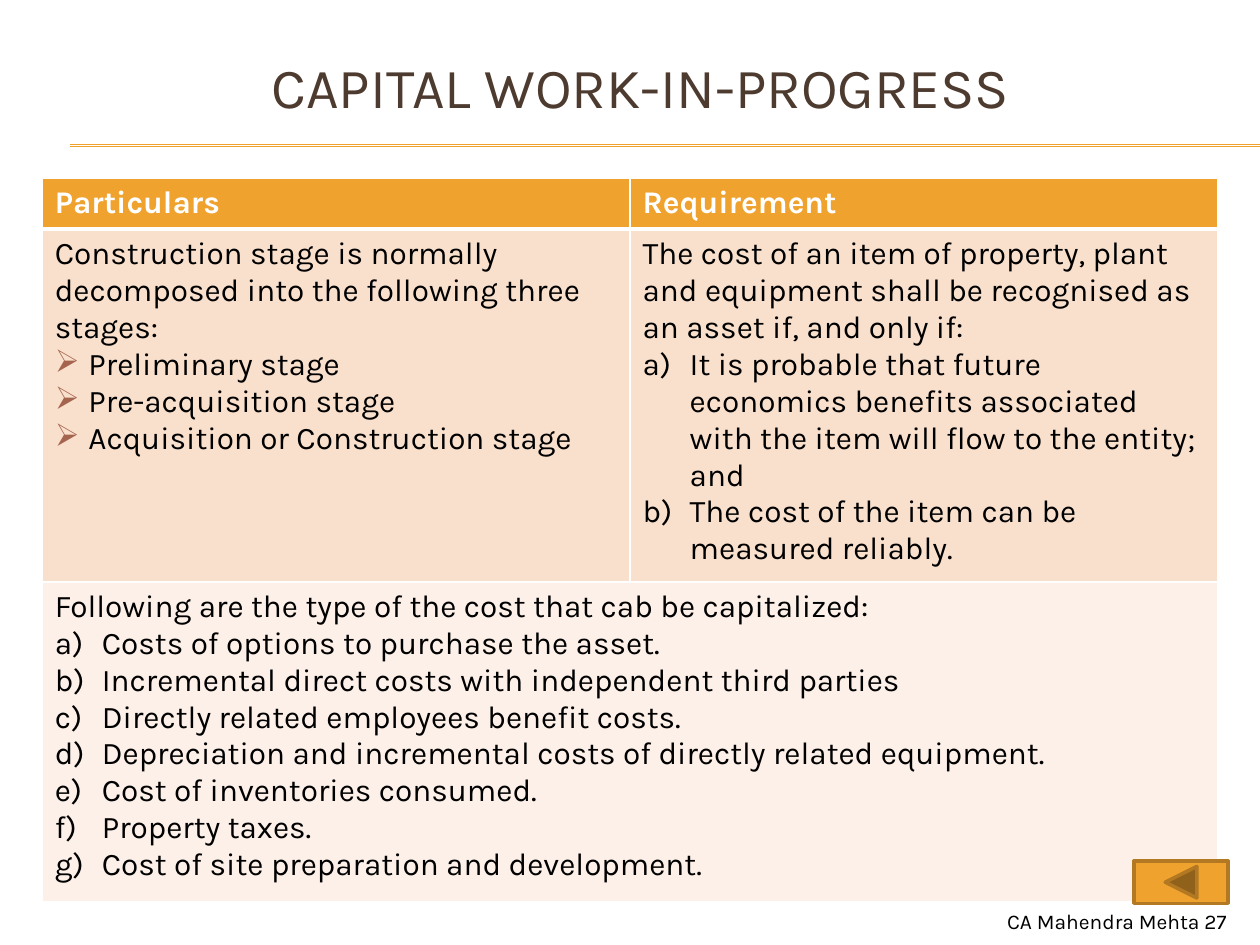
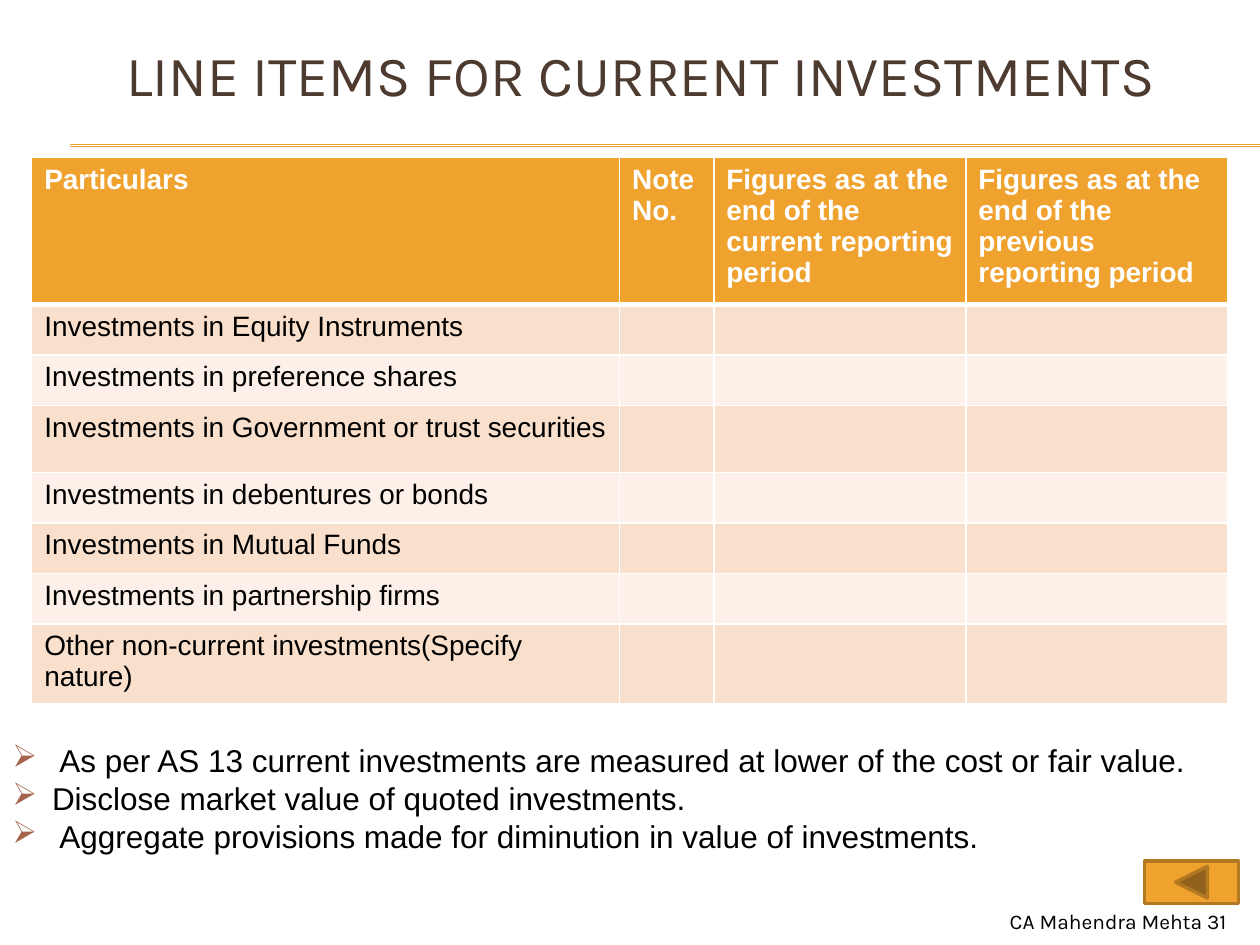
import pptx
import pptx.dml.color
import pptx.enum.shapes
import pptx.enum.text
import pptx.oxml
import pptx.oxml.ns
import pptx.util
from dataclasses import dataclass
from typing import NamedTuple

Cm = pptx.util.Cm
Pt = pptx.util.Pt
Align = pptx.enum.text.PP_ALIGN
Anchor = pptx.enum.text.MSO_ANCHOR


@dataclass(frozen=True)
class Theme:
    heading_font: str = "Karla"
    plain_font: str = "Arial"
    title_size: float = 32.4
    body_size: float = 18
    grid_size: float = 16
    footer_size: float = 12
    brown: str = "4E3B30"
    amber: str = "F0A22E"
    dark_amber: str = "B27822"
    rust: str = "A5644E"
    black: str = "000000"
    white: str = "FFFFFF"
    bands: tuple = ("F9E0CD", "FCF0E8")


THEME = Theme()
SLIDE_WIDTH, SLIDE_HEIGHT = 25.4, 19.05
ARROW, LETTER = "arrow", "letter"


class Box(NamedTuple):
    left: float
    top: float
    width: float
    height: float

    def lengths(self):
        return [Cm(value) for value in self]


class Line(NamedTuple):
    text: str
    mark: str = ""
    indent: float = 0


def rgb(color):
    return pptx.dml.color.RGBColor.from_string(color)


def xml_part(tag, inner="", attributes=""):
    namespace = pptx.oxml.ns.nsdecls("a")
    return pptx.oxml.parse_xml(f"<a:{tag} {namespace} {attributes}>{inner}</a:{tag}>")


def solid(color):
    return f'<a:solidFill><a:srgbClr val="{color}"/></a:solidFill>'


def add_mark(paragraph, mark, indent):
    properties = paragraph._p.get_or_add_pPr()
    properties.set("marL", str(Cm(indent)))
    properties.set("indent", str(-Cm(indent)))
    if mark == ARROW:
        properties.append(xml_part("buClr", f'<a:srgbClr val="{THEME.rust}"/>'))
        properties.append(xml_part("buChar", attributes='char="➢"'))
    else:
        properties.append(xml_part("buAutoNum", attributes='type="alphaLcParenR"'))


def write(frame, lines, font, size, color, bold=False, align=Align.LEFT):
    frame.word_wrap = True
    frame.text = "\n".join(line.text for line in lines)
    for paragraph, line in zip(frame.paragraphs, lines):
        paragraph.alignment = align
        if line.mark:
            add_mark(paragraph, line.mark, line.indent)
        for run in paragraph.runs:
            run.font.name = font
            run.font.size = Pt(size)
            run.font.bold = bold
            run.font.color.rgb = rgb(color)


def add_words(slide, box, lines, font, size, color, align):
    frame = slide.shapes.add_textbox(*box.lengths()).text_frame
    write(frame, lines, font, size, color, align=align)
    return frame


def add_heading(slide, box, title):
    frame = add_words(slide, box, [Line(title)], THEME.heading_font,
                      THEME.title_size, THEME.brown, Align.CENTER)
    frame.vertical_anchor = Anchor.MIDDLE


def add_title_rules(slide, left, top):
    for y in (top, top + 0.03):
        rule = slide.shapes.add_connector(
            pptx.enum.shapes.MSO_CONNECTOR.STRAIGHT,
            Cm(left), Cm(y), Cm(SLIDE_WIDTH), Cm(y))
        rule.line.color.rgb = rgb(THEME.amber)
        rule.line.width = Pt(0.75)
        rule._element.spPr.append(xml_part("effectLst"))


def add_back_button(slide, box):
    button = slide.shapes.add_shape(
        pptx.enum.shapes.MSO_SHAPE.ACTION_BUTTON_BACK_OR_PREVIOUS, *box.lengths())
    button.shadow.inherit = False
    button.fill.solid()
    button.fill.fore_color.rgb = rgb(THEME.amber)
    button.line.color.rgb = rgb(THEME.dark_amber)
    button.line.width = Pt(2)


def add_footer(slide, box, number):
    add_words(slide, box, [Line(f"CA Mahendra Mehta {number}")], THEME.heading_font,
              THEME.footer_size, THEME.black, Align.RIGHT)


def style_cell(cell, fill, top=1, bottom=1):
    cell.fill.solid()
    cell.fill.fore_color.rgb = rgb(fill)
    properties = cell._tc.get_or_add_tcPr()
    widths = {"lnL": 1, "lnR": 1, "lnT": top, "lnB": bottom}
    for position, (side, width) in enumerate(widths.items()):
        border = xml_part(side, solid(THEME.white), f'w="{Pt(width)}"')
        properties.insert(position, border)


def add_grid(slide, left, top, widths, heights, rows, font, size):
    box = Box(left, top, sum(widths), sum(heights))
    grid = slide.shapes.add_table(len(heights), len(widths), *box.lengths()).table
    grid.horz_banding = False
    for column, width in zip(grid.columns, widths):
        column.width = Cm(width)
    for row, height in zip(grid.rows, heights):
        row.height = Cm(height)
    for row_index in range(len(heights)):
        header = row_index == 0
        fill = THEME.amber if header else THEME.bands[(row_index - 1) % 2]
        for column_index in range(len(widths)):
            cell = grid.cell(row_index, column_index)
            style_cell(cell, fill, 3 if row_index == 1 else 1, 3 if header else 1)
            if column_index < len(rows[row_index]):
                write(cell.text_frame, rows[row_index][column_index], font, size,
                      THEME.white if header else THEME.black, bold=header)
    return grid


def add_page(deck, title, title_height, button_left, number):
    slide = deck.slides.add_slide(deck.slide_layouts[6])
    add_title_rules(slide, 1.42, 2.92)
    add_heading(slide, Box(0.85, 0.64, 24.13, title_height), title)
    add_back_button(slide, Box(button_left, 17.36, 1.9, 0.85))
    add_footer(slide, Box(19.26, 18.2, 5.72, 0.85), number)
    return slide


def marked(mark, indent, *texts):
    return [Line(text, mark, indent) for text in texts]


def move_behind_button(slide, frame):
    slide.shapes._spTree.insert(5, frame)


def build_capital_work(deck):
    slide = add_page(deck, "CAPITAL WORK-IN-PROGRESS", 2.2, 22.86, 27)
    stages = [
        Line("Construction stage is normally decomposed into the following three stages:"),
        *marked(ARROW, 0.68, "Preliminary stage", "Pre-acquisition stage",
                "Acquisition or Construction stage"),
    ]
    recognition = [
        Line("The cost of an item of property, plant and equipment shall be "
             "recognised as an asset if, and only if:"),
        *marked(LETTER, 0.95,
                "It is probable that future economics benefits associated with "
                "the item will flow to the entity; and",
                "The cost of the item can be measured reliably."),
    ]
    capitalized_costs = [
        Line("Following are the type of the cost that cab be capitalized:"),
        *marked(LETTER, 0.95,
                "Costs of options to purchase the asset.",
                "Incremental direct costs with independent third parties",
                "Directly related employees benefit costs.",
                "Depreciation and incremental costs of directly related equipment.",
                "Cost of inventories consumed.",
                "Property taxes.",
                "Cost of site preparation and development."),
    ]
    rows = [[[Line("Particulars")], [Line("Requirement")]],
            [stages, recognition],
            [capitalized_costs]]
    requirements = add_grid(slide, 0.85, 3.6, [11.85, 11.85], [0.85, 6.05, 6.45],
                            rows, THEME.heading_font, THEME.body_size)
    requirements.cell(2, 0).merge(requirements.cell(2, 1))
    move_behind_button(slide, slide.shapes[-1]._element)


def build_current_investments(deck):
    slide = add_page(deck, "LINE ITEMS FOR CURRENT INVESTMENTS", 1.7, 23.07, 31)
    headings = ["Particulars", "Note No.",
                "Figures as at the end of the current reporting period",
                "Figures as at the end of the previous reporting period"]
    investments = ["Investments in Equity Instruments",
                   "Investments in preference shares",
                   "Investments in Government or trust securities",
                   "Investments in debentures or bonds",
                   "Investments in Mutual Funds",
                   "Investments in partnership firms",
                   "Other non-current investments(Specify nature)"]
    rows = [[[Line(heading)] for heading in headings]]
    rows += [[[Line(investment)]] for investment in investments]
    add_grid(slide, 0.64, 3.18, [11.85, 1.9, 5.08, 5.28],
             [2.96, 0.85, 0.9, 1.35, 1.02, 0.85, 0.9, 1.55],
             rows, THEME.plain_font, THEME.grid_size)
    move_behind_button(slide, slide.shapes[-1]._element)
    notes = [
        Line("As per AS 13 current investments are measured at lower of the "
             "cost or fair value.", ARROW, 0.95),
        Line("Disclose market value of quoted investments.", ARROW, 0.8),
        Line("Aggregate provisions made for diminution in value of investments.",
             ARROW, 0.95),
    ]
    add_words(slide, Box(0, 14.82, 24.55, 2.57), notes, THEME.plain_font,
              THEME.body_size, THEME.black, Align.JUSTIFY)


def main():
    deck = pptx.Presentation()
    deck.slide_width = Cm(SLIDE_WIDTH)
    deck.slide_height = Cm(SLIDE_HEIGHT)
    build_capital_work(deck)
    build_current_investments(deck)
    deck.save("out.pptx")


if __name__ == "__main__":
    main()
